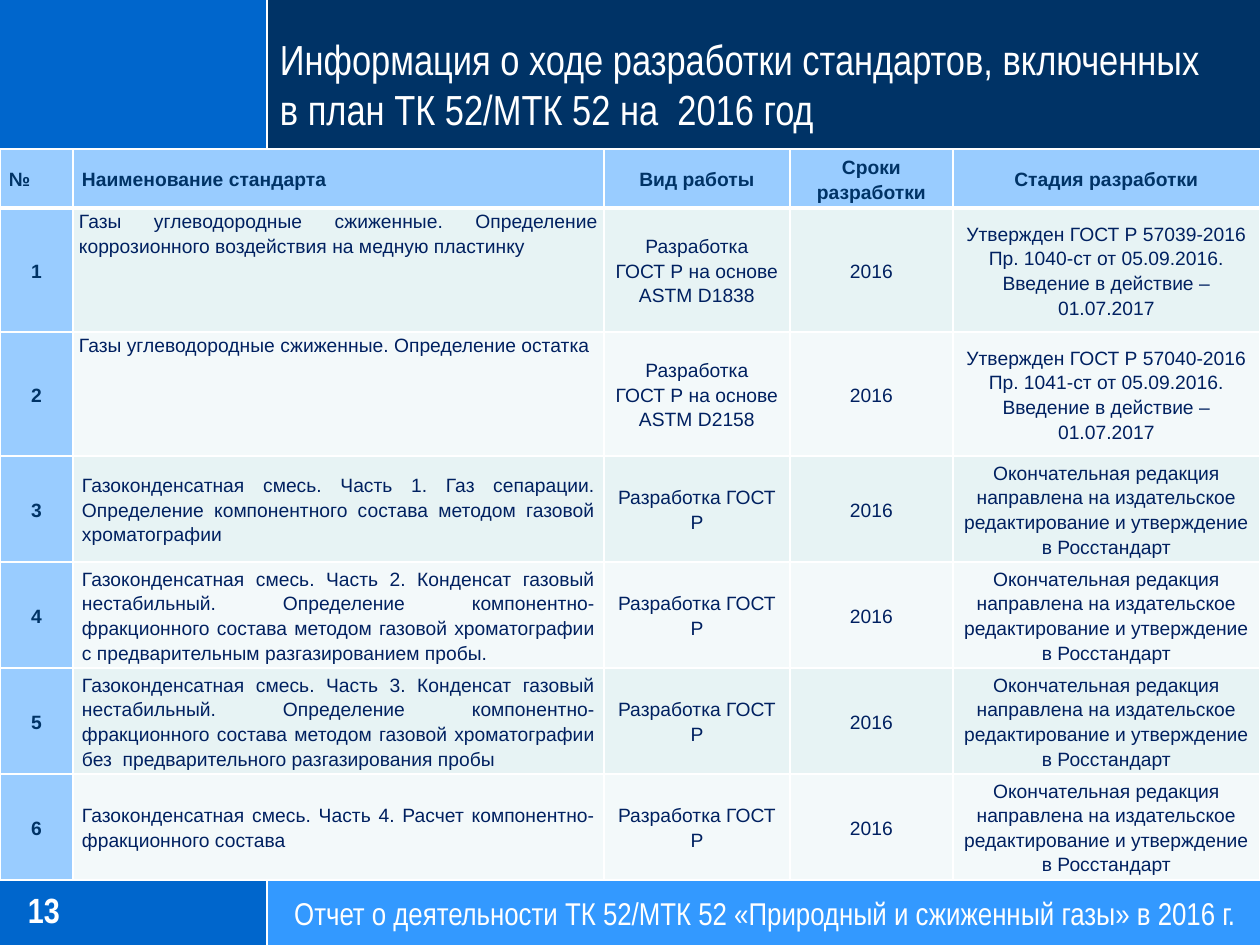
import pptx
import pptx.util
import pptx.dml.color
import pptx.enum.text
import pptx.enum.shapes
import pptx.oxml.ns
from lxml import etree

RGB = pptx.dml.color.RGBColor
ALIGN = pptx.enum.text.PP_ALIGN
ANCHOR = pptx.enum.text.MSO_ANCHOR
qn = pptx.oxml.ns.qn

WHITE = RGB(0xFF, 0xFF, 0xFF)
BLUE = RGB(0x00, 0x66, 0xCC)
NAVY = RGB(0x00, 0x33, 0x66)
SKY = RGB(0x33, 0x99, 0xFF)
PALE = RGB(0x99, 0xCC, 0xFF)
INK = RGB(0x00, 0x20, 0x60)
MINT = RGB(0xE7, 0xF3, 0xF4)
MIST = RGB(0xF3, 0xF9, 0xFA)

WIDE, HIGH = 1260, 945
SPLIT, HEAD, FOOT = 267, 149, 871
COLS = [73, 531, 186, 163, 307]
ROWS = [59] + [124] * 2 + [106] * 4

DRAFT = "Разработка ГОСТ Р"
STAGE = "Окончательная редакция направлена на издательское редактирование и утверждение в Росстандарт"
MIX = "Газоконденсатная смесь. Часть "
UNSTABLE = "Конденсат газовый нестабильный. Определение компонентно-фракционного состава методом газовой хроматографии "


def basis(code):
    return f"Разработка\nГОСТ Р на основе\nASTM {code}"


def passed(code, order):
    return (f"Утвержден ГОСТ Р {code}-2016\n"
            f"Пр. {order}-ст от 05.09.2016. Введение в действие – 01.07.2017")


HEADS = ["№", "Наименование стандарта", "Вид работы", "Сроки разработки", "Стадия разработки"]
ITEMS = [
    ("Газы углеводородные сжиженные. Определение коррозионного воздействия на медную пластинку",
     basis("D1838"), passed(57039, 1040)),
    ("Газы углеводородные сжиженные. Определение остатка",
     basis("D2158"), passed(57040, 1041)),
    (MIX + "1. Газ сепарации. Определение компонентного состава методом газовой хроматографии", DRAFT, STAGE),
    (MIX + "2. " + UNSTABLE + "с предварительным разгазированием пробы.", DRAFT, STAGE),
    (MIX + "3. " + UNSTABLE + "без  предварительного разгазирования пробы", DRAFT, STAGE),
    (MIX + "4. Расчет компонентно-фракционного состава", DRAFT, STAGE),
]


class Deck:
    font = "Arial Narrow"
    body = "Arial"
    scale = 914400 / 126

    def __init__(self):
        self.file = pptx.Presentation()
        self.file.slide_width = self.px(WIDE)
        self.file.slide_height = self.px(HIGH)
        self.slide = self.file.slides.add_slide(self.file.slide_layouts[5])

    def px(self, size):
        return pptx.util.Emu(round(size * self.scale))

    def style(self, frame, font, size, color, bold=False, align=ALIGN.LEFT, space=1.0):
        for para in frame.paragraphs:
            para.alignment = align
            para.line_spacing = space
            for run in para.runs:
                run.font.name = font
                run.font.size = pptx.util.Pt(size)
                run.font.bold = bold
                run.font.color.rgb = color

    def rect(self, x, y, w, h, color):
        shape = self.slide.shapes.add_shape(
            pptx.enum.shapes.MSO_SHAPE.RECTANGLE, *map(self.px, (x, y, w, h)))
        shape.shadow.inherit = False
        shape.fill.solid()
        shape.fill.fore_color.rgb = color
        shape.line.fill.background()

    def line(self, x1, y1, x2, y2):
        rule = self.slide.shapes.add_connector(
            pptx.enum.shapes.MSO_CONNECTOR.STRAIGHT, *map(self.px, (x1, y1, x2, y2)))
        rule.line.color.rgb = WHITE
        rule.line.width = pptx.util.Pt(1.25)
        etree.SubElement(rule.element.spPr, qn("a:effectLst"))

    def fit(self, frame, text, anchor):
        frame.text = text
        frame.word_wrap = True
        frame.auto_size = pptx.enum.text.MSO_AUTO_SIZE.NONE
        frame.vertical_anchor = anchor
        frame.margin_left = frame.margin_right = 0
        frame.margin_top = frame.margin_bottom = 0

    def title(self, x, y, w, h, text):
        shape = self.slide.shapes.title
        shape.left, shape.top, shape.width, shape.height = map(self.px, (x, y, w, h))
        shape.element.getparent().append(shape.element)
        self.fit(shape.text_frame, text, ANCHOR.BOTTOM)
        self.style(shape.text_frame, self.font, 24, WHITE)

    def text(self, x, y, w, h, text, size, bold=False, align=ALIGN.LEFT):
        box = self.slide.shapes.add_textbox(*map(self.px, (x, y, w, h)))
        self.fit(box.text_frame, text, ANCHOR.MIDDLE)
        self.style(box.text_frame, self.font, size, WHITE, bold, align)

    def edge(self, cell, side, width):
        line = etree.SubElement(cell._tc.get_or_add_tcPr(), qn("a:ln" + side),
                                w=str(pptx.util.Pt(width)))
        fill = etree.SubElement(line, qn("a:solidFill"))
        etree.SubElement(fill, qn("a:srgbClr"), val=str(WHITE))

    def cell(self, cell, text, row, col):
        head, label = row == 0, row == 0 or col == 0
        top = col == 1 and row in (1, 2)
        cell.text = text
        cell.vertical_anchor = ANCHOR.TOP if top else ANCHOR.MIDDLE
        cell.margin_left = cell.margin_right = self.px(6 if top else 9)
        cell.margin_top = cell.margin_bottom = 0
        for side in "LRTB":
            thick = (head and side == "B") or (row == 1 and side == "T")
            self.edge(cell, side, 3 if thick else 1)
        cell.fill.solid()
        cell.fill.fore_color.rgb = PALE if label else MINT if row % 2 else MIST
        align = ALIGN.CENTER
        if head and col < 2:
            align = ALIGN.LEFT
        elif col == 1:
            align = ALIGN.JUSTIFY
        self.style(cell.text_frame, self.body, 11, NAVY if label else INK, label, align, 1.15)

    def table(self, x, y, cols, rows, data):
        grid = self.slide.shapes.add_table(
            len(rows), len(cols), *map(self.px, (x, y, sum(cols), sum(rows)))).table
        for col, size in zip(grid.columns, cols):
            col.width = self.px(size)
        for row, size in zip(grid.rows, rows):
            row.height = self.px(size)
        for r, texts in enumerate(data):
            for c, text in enumerate(texts):
                self.cell(grid.cell(r, c), text, r, c)


def main():
    deck = Deck()
    for y, h, color in ((FOOT, HIGH - FOOT, SKY), (0, HEAD, NAVY)):
        deck.rect(0, y, SPLIT, h, BLUE)
        deck.rect(SPLIT, y, WIDE - SPLIT, h, color)
        deck.line(SPLIT, y, SPLIT, y + h)
    for y in (FOOT, HEAD):
        deck.line(0, y, WIDE, y)
    deck.title(280, 71, 979, 63,
               "Информация о ходе разработки стандартов, включенных\vв план ТК 52/МТК 52 на  2016 год")
    deck.text(28, 877, 205, 66, "13", 20, bold=True)
    deck.text(270, 881, 990, 64,
              "Отчет о деятельности ТК 52/МТК 52 «Природный и сжиженный газы» в 2016 г.",
              18, align=ALIGN.CENTER)
    data = [HEADS] + [(str(n), name, work, "2016", stage)
                      for n, (name, work, stage) in enumerate(ITEMS, 1)]
    deck.table(0, HEAD, COLS, ROWS, data)
    deck.file.save("out.pptx")


if __name__ == "__main__":
    main()
